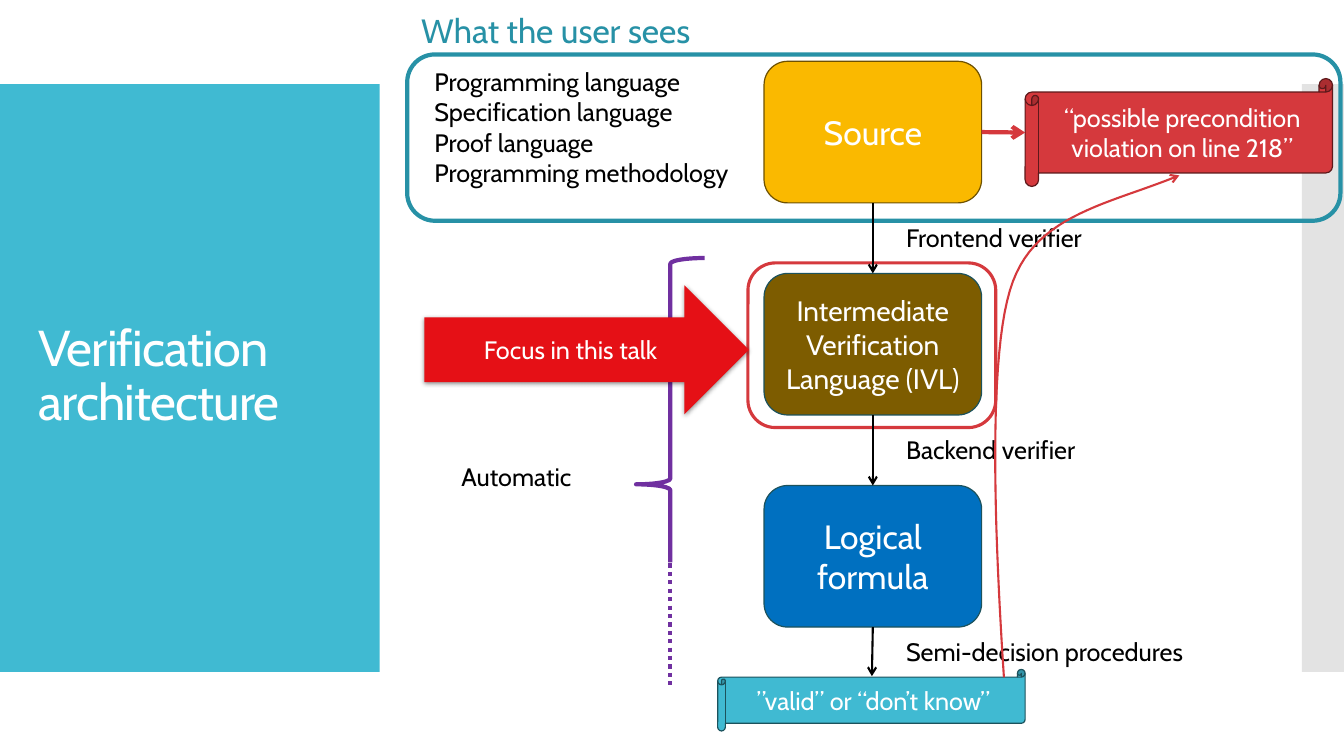
import dataclasses
import typing

import lxml.etree
import pptx
import pptx.dml.color
import pptx.enum.dml
import pptx.enum.shapes
import pptx.enum.text
import pptx.oxml.ns
import pptx.util

COLS, ROWS = 160, 90
WIDE, HIGH = pptx.util.Inches(13.33), pptx.util.Inches(7.5)
KIND = pptx.enum.shapes.MSO_SHAPE
WHITE, BLACK, RED, TEAL = "FFFFFF", "000000", "D5393D", "40BAD2"
DARK, EDGE, PURPLE = "2791A6", "1C525C", "7030A0"
STEP = 25.25
Point = tuple[float, float]


@dataclasses.dataclass
class Block:
    kind: int
    left: float
    top: float
    width: float
    height: float
    fill: str | None = None
    line: str | None = None
    weight: float = 0.85
    text: str = ""
    size: float = 18


@dataclasses.dataclass
class Label:
    text: str
    left: float
    top: float
    width: float
    height: float = 4.8
    size: float = 18
    color: str = BLACK


def across(cols: float) -> int:
    return round(WIDE * cols / COLS)


def down(rows: float) -> int:
    return round(HIGH * rows / ROWS)


def color(code: str) -> pptx.dml.color.RGBColor:
    return pptx.dml.color.RGBColor.from_string(code)


def node(parent: typing.Any, tag: str, **attrs: str) -> typing.Any:
    return lxml.etree.SubElement(parent, pptx.oxml.ns.qn(tag), attrs)


def write(shape: typing.Any, text: str, *, size: float = 18, tint: str = BLACK,
          center: bool = False, middle: bool = False, leading: float | None = None,
          spacing: int | None = None) -> None:
    frame = shape.text_frame
    frame.word_wrap = True
    anchor = pptx.enum.text.MSO_ANCHOR
    frame.vertical_anchor = anchor.MIDDLE if middle else anchor.TOP
    align = pptx.enum.text.PP_ALIGN
    frame.text = text
    for para in frame.paragraphs:
        para.alignment = align.CENTER if center else align.LEFT
        if leading:
            para.line_spacing = leading
        for run in para.runs:
            run.font.name = "Cabin"
            run.font.size = pptx.util.Pt(size)
            run.font.color.rgb = color(tint)
            if spacing is not None:
                run.font._element.set("spc", str(spacing))


def stroke(shape: typing.Any, code: str, weight: float, arrow: bool = False) -> None:
    shape.line.color.rgb = color(code)
    shape.line.width = pptx.util.Pt(weight)
    if arrow:
        line = shape._element.spPr.find(pptx.oxml.ns.qn("a:ln"))
        node(line, "a:tailEnd", type="arrow")


def draw(slide: typing.Any, block: Block) -> typing.Any:
    shape = slide.shapes.add_shape(block.kind, across(block.left), down(block.top),
                                   across(block.width), down(block.height))
    shape.shadow.inherit = False
    if block.fill:
        shape.fill.solid()
        shape.fill.fore_color.rgb = color(block.fill)
    else:
        shape.fill.background()
    if block.line:
        stroke(shape, block.line, block.weight)
    else:
        shape.line.fill.background()
    if block.text:
        write(shape, block.text, size=block.size, tint=WHITE, center=True, middle=True)
    return shape


def label(slide: typing.Any, item: Label, **style: typing.Any) -> None:
    box = slide.shapes.add_textbox(across(item.left), down(item.top),
                                   across(item.width), down(item.height))
    write(box, item.text, size=item.size, tint=item.color, **style)


def link(slide: typing.Any, start: Point, end: Point, code: str = BLACK,
         weight: float = 1.5, arrow: bool = True) -> typing.Any:
    line = slide.shapes.add_connector(
        pptx.enum.shapes.MSO_CONNECTOR.STRAIGHT, across(start[0]), down(start[1]),
        across(end[0]), down(end[1]))
    stroke(line, code, weight, arrow)
    node(line._element.spPr, "a:effectLst")
    return line


def bend(points: list[Point], count: int = 24) -> list[Point]:
    track = [points[0]]
    for first in range(0, len(points) - 1, 3):
        a, b, c, d = points[first:first + 4]
        for part in range(1, count + 1):
            t = part / count
            u = 1 - t
            x, y = (u**3 * a[i] + 3 * u * u * t * b[i] + 3 * u * t * t * c[i] + t**3 * d[i]
                    for i in (0, 1))
            track.append((x, y))
    return track


def curve(slide: typing.Any, points: list[Point]) -> None:
    track = [(across(x), down(y)) for x, y in bend(points)]
    form = slide.shapes.build_freeform(*track[0])
    form.add_line_segments(track[1:], close=False)
    shape = form.convert_to_shape()
    shape.shadow.inherit = False
    shape.fill.background()
    stroke(shape, RED, 1.5, True)


def stage(row: int, text: str, fill: str, line: str, size: float) -> Block:
    return Block(KIND.ROUNDED_RECTANGLE, 90.96, 7.3 + row * STEP, 25.9, 16.85,
                 fill, line, text=text, size=size)


def main() -> None:
    deck = pptx.Presentation()
    deck.slide_width, deck.slide_height = WIDE, HIGH
    slide = deck.slides.add_slide(deck.slide_layouts[6])

    draw(slide, Block(KIND.RECTANGLE, 0, 10, 45.2, 70, TEAL))
    band = draw(slide, Block(KIND.RECTANGLE, 155, 10, 5, 70, "C8C8C8"))
    tint = band._element.spPr.find(".//" + pptx.oxml.ns.qn("a:srgbClr"))
    node(tint, "a:alpha", val="50000")
    draw(slide, Block(KIND.ROUNDED_RECTANGLE, 89.04, 31.3, 29.5, 19.6, WHITE, RED, 2.25))
    draw(slide, Block(KIND.ROUNDED_RECTANGLE, 48.48, 6.48, 111.1, 19.8, None, DARK, 3))
    label(slide, Label("Verification architecture", 3.36, 14.76, 38.64, 60.36, 36, WHITE),
          middle=True, leading=0.9, spacing=-60)

    source, middle, logic = [draw(slide, stage(row, *look)) for row, look in enumerate([
        ("Source", "FAB900", "6E5100", 24),
        ("Intermediate Verification Language (IVL)", "7D5C00", EDGE, 20),
        ("Logical formula", "0070C0", EDGE, 24),
    ])]
    label(slide, Label("Programming language\nSpecification language\nProof language\n"
                       "Programming methodology", 50.52, 7.32, 38.64, 15.72))
    for upper, lower in ((source, middle), (middle, logic)):
        line = link(slide, (0, 0), (1, 1))
        line.begin_connect(upper, 2)
        line.end_connect(lower, 0)
    for text, top, width in (("Frontend verifier", 25.9, 34.2),
                             ("Backend verifier", 25.9 + STEP, 34.2),
                             ("Semi-decision procedures", 75.12, 45.84)):
        label(slide, Label(text, 106.68, top, width))
    link(slide, (103.9, 75), (103.8, 80.5)).begin_connect(logic, 2)

    draw(slide, Block(KIND.HORIZONTAL_SCROLL, 85.44, 79.7, 36.6, 7.32, TEAL, EDGE,
                      text="”valid” or “don’t know”"))
    error = draw(slide, Block(KIND.HORIZONTAL_SCROLL, 122.04, 9.36, 36.6, 12.84, RED, "5D191B",
                              text="“possible precondition violation on line 218”"))
    line = link(slide, (0, 0), (1, 1), RED, 3)
    line.begin_connect(source, 3)
    line.end_connect(error, 1)
    curve(slide, [(119.52, 80.64), (118.44, 64.08), (117.48, 41.64), (120.6, 33.48),
                  (123.6, 25.44), (132.24, 24.24), (140.4, 20.88)])

    label(slide, Label("What the user sees", 48.96, 0.6, 42.48, 6, 24, DARK))
    draw(slide, Block(KIND.LEFT_BRACE, 75.72, 30.72, 8.16, 53.88, None, PURPLE, 3))
    draw(slide, Block(KIND.RECTANGLE, 75.12, 66.96, 9.36, 19.92, WHITE))
    dots = link(slide, (79.8, 67.08), (79.8, 81.6), PURPLE, 3, False)
    dots.line.dash_style = pptx.enum.dml.MSO_LINE.ROUND_DOT
    label(slide, Label("Automatic", 53.76, 54.36, 21.36))
    focus = draw(slide, Block(KIND.RIGHT_ARROW, 50.52, 33.96, 38.64, 15.36, "E51016",
                              text="Focus in this talk"))
    effect = focus._element.spPr.find(pptx.oxml.ns.qn("a:effectLst"))
    shade = node(effect, "a:outerShdw", blurRad=str(pptx.util.Pt(3.5)),
                 dist=str(pptx.util.Pt(1.1)), dir="5400000", rotWithShape="0")
    node(node(shade, "a:srgbClr", val=BLACK), "a:alpha", val="45000")
    deck.save("out.pptx")


if __name__ == "__main__":
    main()
